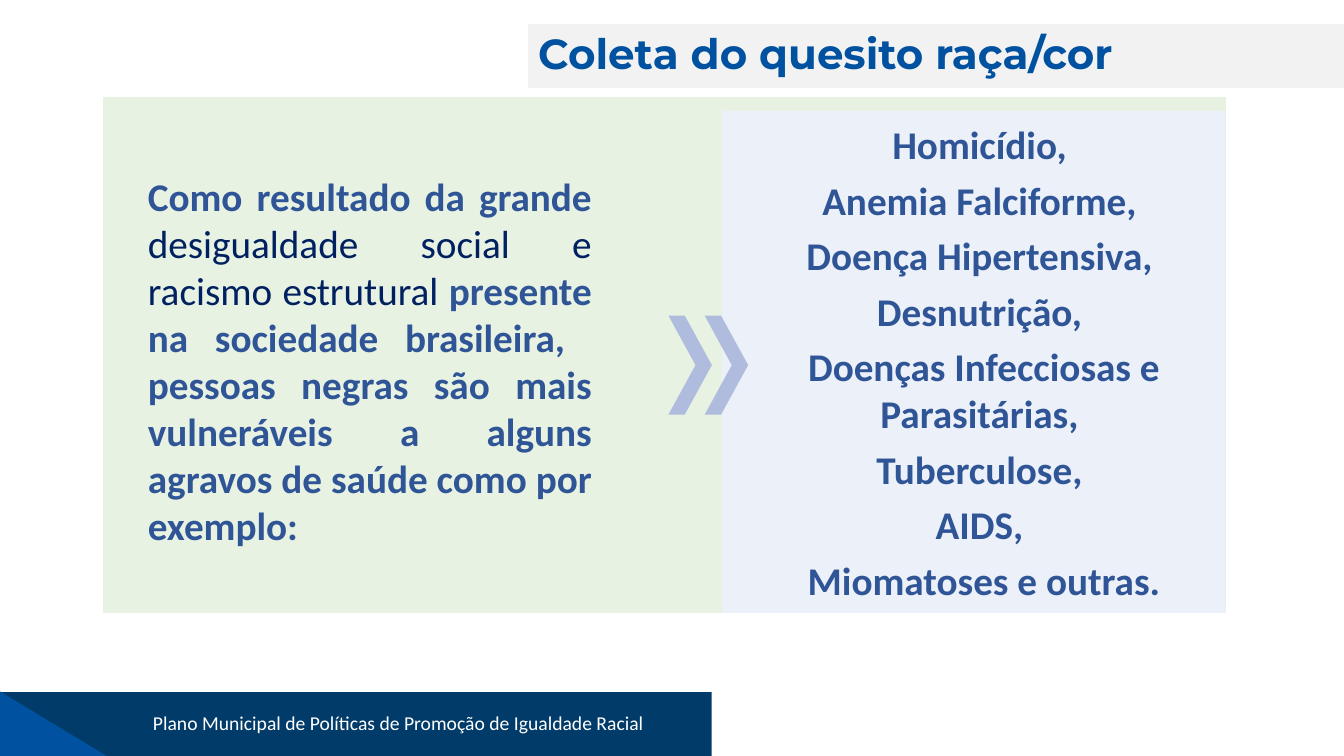
from dataclasses import dataclass

from pptx import Presentation
from pptx.dml.color import RGBColor
from pptx.enum.shapes import MSO_SHAPE
from pptx.enum.text import MSO_ANCHOR, PP_ALIGN
from pptx.util import Pt

RECT, PROCESS = MSO_SHAPE.RECTANGLE, MSO_SHAPE.FLOWCHART_PROCESS
TRIANGLE, CHEVRON = MSO_SHAPE.RIGHT_TRIANGLE, MSO_SHAPE.CHEVRON
TOP, MIDDLE = MSO_ANCHOR.TOP, MSO_ANCHOR.MIDDLE
LEFT, CENTER, JUSTIFY = PP_ALIGN.LEFT, PP_ALIGN.CENTER, PP_ALIGN.JUSTIFY


@dataclass(frozen=True)
class Theme:
    """Colours, fonts and type sizes of the slide."""
    navy: str = "003B69"
    blue: str = "00519F"
    green: str = "E7F2E2"
    pale: str = "EBF0F9"
    arrow: str = "B0BCDE"
    grey: str = "F2F2F2"
    white: str = "FFFFFF"
    strong: str = "2F5597"
    dark: str = "002060"
    body_font: str = "Calibri"
    title_font: str = "Montserrat"
    footer_size: float = 14
    body_size: float = 28
    title_size: float = 30


T = Theme()

CONDITIONS = [
    "Homicídio, ",
    "Anemia Falciforme, ",
    "Doença Hipertensiva, ",
    "Desnutrição, ",
    "Doenças Infecciosas e Parasitárias, ",
    "Tuberculose, ",
    "AIDS, ",
    "Miomatoses e outras.",
]
STATEMENT = [
    ("Como resultado da grande ", T.strong, True),
    ("desigualdade social e racismo estrutural ", T.dark, False),
    ("presente na sociedade brasileira,  pessoas negras são mais vulneráveis "
     "a alguns agravos de saúde como por exemplo: ", T.strong, True),
]


def add_block(shapes, kind, box, fill):
    """Add a flat filled shape without outline."""
    sp = shapes.add_shape(kind, *map(Pt, box))
    sp.shadow.inherit = False
    sp.fill.solid()
    sp.fill.fore_color.rgb = RGBColor.from_string(fill)
    sp.line.fill.background()
    return sp


def write(sp, paragraphs, size, font=T.body_font, align=LEFT, anchor=TOP, indent=0, after=0):
    """Fill a shape with paragraphs of (text, colour, bold) runs."""
    tf = sp.text_frame
    tf.word_wrap = True
    tf.vertical_anchor = anchor
    for i, runs in enumerate(paragraphs):
        p = tf.add_paragraph() if i else tf.paragraphs[0]
        p.alignment = align
        p.space_after = Pt(after)
        p._p.get_or_add_pPr().set("marL", str(Pt(indent)))
        for text, colour, bold in runs:
            r = p.add_run()
            r.text = text
            r.font.name = font
            r.font.size = Pt(size)
            r.font.bold = bold
            r.font.color.rgb = RGBColor.from_string(colour)


def add_text(s, box, paragraphs, size, **style):
    """Add a wrapping text box."""
    write(s.shapes.add_textbox(*map(Pt, box)), paragraphs, size, **style)


def add_double_chevron(s, left, top, width, height, step):
    """Add two grouped chevrons side by side."""
    group = s.shapes.add_group_shape()
    for i in range(2):
        sp = add_block(group.shapes, CHEVRON, (left + i * step, top, width, height), T.arrow)
        sp.adjustments[0] = 0.623


def main():
    """Build the slide and save it."""
    prs = Presentation()
    prs.slide_width, prs.slide_height = Pt(960), Pt(540)
    s = prs.slides.add_slide(prs.slide_layouts[6])

    add_block(s.shapes, RECT, (0, 494.4, 508.4, 45.6), T.navy)
    add_block(s.shapes, TRIANGLE, (0, 493.9, 76.3, 46.1), T.blue)
    add_block(s.shapes, PROCESS, (73.5, 69, 802.5, 369), T.green)
    add_text(s, (64, 493.2, 441.4, 46),
             [[("Plano Municipal de Políticas de Promoção de Igualdade Racial", T.white, False)]],
             T.footer_size, align=CENTER, anchor=MIDDLE)

    panel = add_block(s.shapes, RECT, (515.6, 79.2, 360, 358.6), T.pale)
    write(panel, [[(name, T.strong, True)] for name in CONDITIONS],
          T.body_size, align=CENTER, anchor=MIDDLE, indent=14.4, after=6)
    add_text(s, (84.2, 119.5, 345.6, 278.6), [STATEMENT],
             T.body_size, align=JUSTIFY, indent=14.4, after=6)
    add_double_chevron(s, 477.5, 225.5, 31, 70.6, 25.9)

    add_block(s.shapes, PROCESS, (377.5, 16.8, 582.5, 46), T.grey)
    add_text(s, (377.3, 15.8, 442, 44),
             [[("Coleta do quesito raça/cor", T.blue, True)]],
             T.title_size, font=T.title_font)

    prs.save("out.pptx")


if __name__ == "__main__":
    main()
